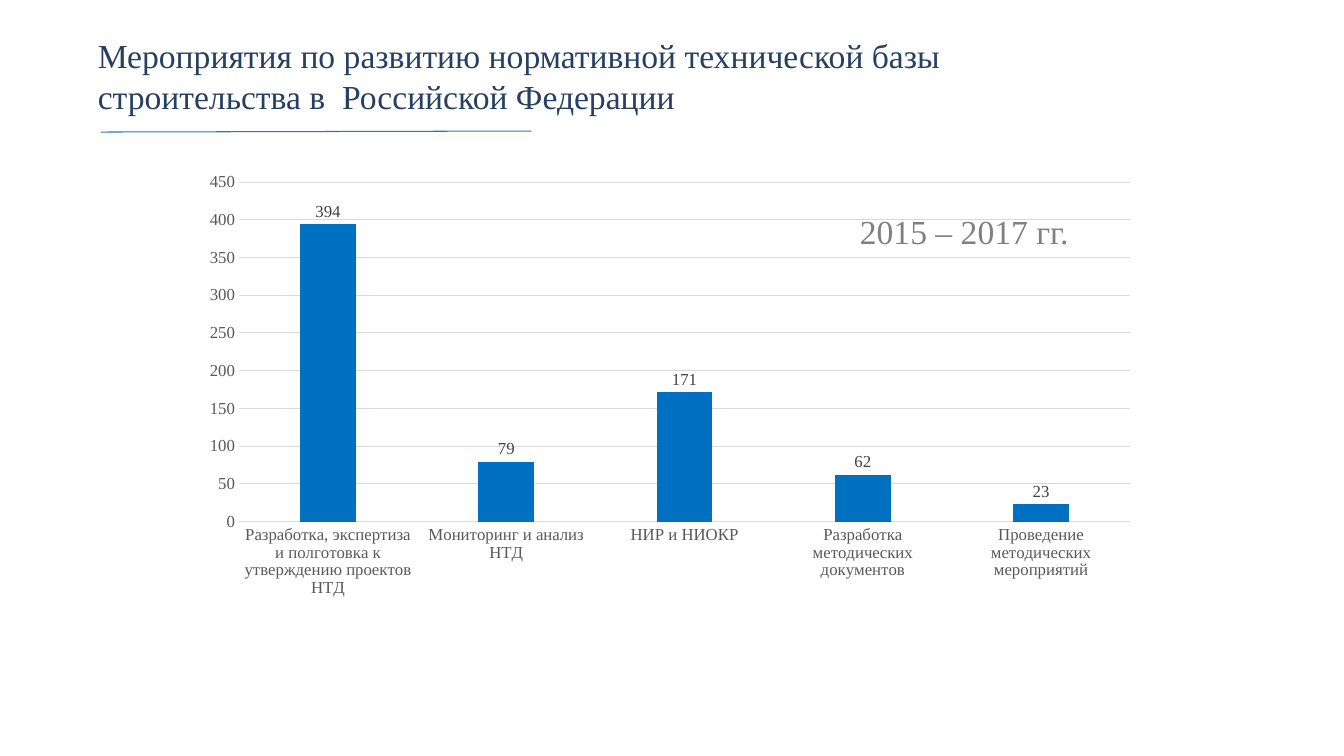
from lxml import etree
from pptx import Presentation
from pptx.chart.data import CategoryChartData
from pptx.dml.color import RGBColor
from pptx.enum.chart import XL_CHART_TYPE as ChartType, XL_LABEL_POSITION as LabelPos, XL_TICK_MARK as Tick
from pptx.enum.shapes import MSO_CONNECTOR as Connector
from pptx.enum.text import MSO_ANCHOR as Anchor, MSO_AUTO_SIZE as AutoSize, PP_ALIGN as Align
from pptx.oxml.ns import qn
from pptx.util import Pt

PX = 9144  # 100 px to the inch
FONT = "Times New Roman"
NAVY = RGBColor(0x25, 0x40, 0x61)
RULE_BLUE = RGBColor(0x2E, 0x75, 0xB6)
BAR_BLUE = RGBColor(0x00, 0x70, 0xC0)
GRAY = RGBColor(0x80, 0x80, 0x80)
AXIS_GRAY = RGBColor(0x59, 0x59, 0x59)
LABEL_GRAY = RGBColor(0x40, 0x40, 0x40)
GRID_GRAY = RGBColor(0xD9, 0xD9, 0xD9)

ACTIVITIES = {
    "Разработка, экспертиза и полготовка к утверждению проектов НТД": 394,
    "Мониторинг и анализ НТД": 79,
    "НИР и НИОКР": 171,
    "Разработка методических документов": 62,
    "Проведение методических мероприятий": 23,
}


def px(*lengths):
    return [n * PX for n in lengths]


def style_font(font, size, color):
    font.name, font.size = FONT, Pt(size)
    font.color.rgb = color


def style_line(line, color):
    line.color.rgb = color
    line.width = Pt(0.75)


def fill_text(sp, text, color):
    tf = sp.text_frame
    tf.text = text
    tf.vertical_anchor = Anchor.TOP
    p = tf.paragraphs[0]
    p.alignment = Align.LEFT
    style_font(p.runs[0].font, 24, color)
    return tf


def add_header(s, x, y, w, h):
    """Title with a thin, slightly rising rule below it."""
    title = s.shapes.title
    title.left, title.top, title.width, title.height = px(x, y, w, h)
    tf = fill_text(title, "Мероприятия по развитию нормативной технической базы "
                          "строительства в  Российской Федерации", NAVY)
    tf.word_wrap = True
    tf.auto_size = AutoSize.NONE
    rule = s.shapes.add_connector(
        Connector.STRAIGHT, *px(x + 13, y + h + 10, x + 440, y + h + 9))
    style_line(rule.line, RULE_BLUE)
    etree.SubElement(rule._element.spPr, qn("a:effectLst"))


def add_activity_chart(s, x, y, w, h):
    data = CategoryChartData()
    data.categories = list(ACTIVITIES)
    data.add_series("Series 1", list(ACTIVITIES.values()))
    chart = s.shapes.add_chart(ChartType.COLUMN_CLUSTERED, *px(x, y, w, h), data).chart
    chart.has_legend = chart.has_title = False
    style_font(chart.font, 12, AXIS_GRAY)

    for axis in (chart.category_axis, chart.value_axis):
        axis.major_tick_mark = axis.minor_tick_mark = Tick.NONE
        style_font(axis.tick_labels.font, 12, AXIS_GRAY)
    style_line(chart.category_axis.format.line, GRID_GRAY)
    chart.value_axis.format.line.fill.background()
    style_line(chart.value_axis.major_gridlines.format.line, GRID_GRAY)

    plot = chart.plots[0]
    plot.gap_width, plot.overlap = 219, -27
    plot.vary_by_categories = False
    fill = plot.series[0].format.fill
    fill.solid()
    fill.fore_color.rgb = BAR_BLUE
    labels = plot.series[0].data_labels
    labels.show_value = True
    labels.position = LabelPos.OUTSIDE_END
    style_font(labels.font, 12, LABEL_GRAY)


def add_period(s, x, y, w, h):
    tf = fill_text(s.shapes.add_textbox(*px(x, y, w, h)), "2015 – 2017 гг.", GRAY)
    tf.word_wrap = False
    tf.auto_size = AutoSize.SHAPE_TO_FIT_TEXT


def main():
    prs = Presentation()
    prs.slide_width, prs.slide_height = px(1333, 750)
    s = prs.slides.add_slide(prs.slide_layouts[5])
    add_activity_chart(s, 189, 163, 951, 438)
    add_header(s, 87, 30, 882, 91)
    add_period(s, 843, 204, 233, 50)
    prs.save("out.pptx")


if __name__ == "__main__":
    main()
